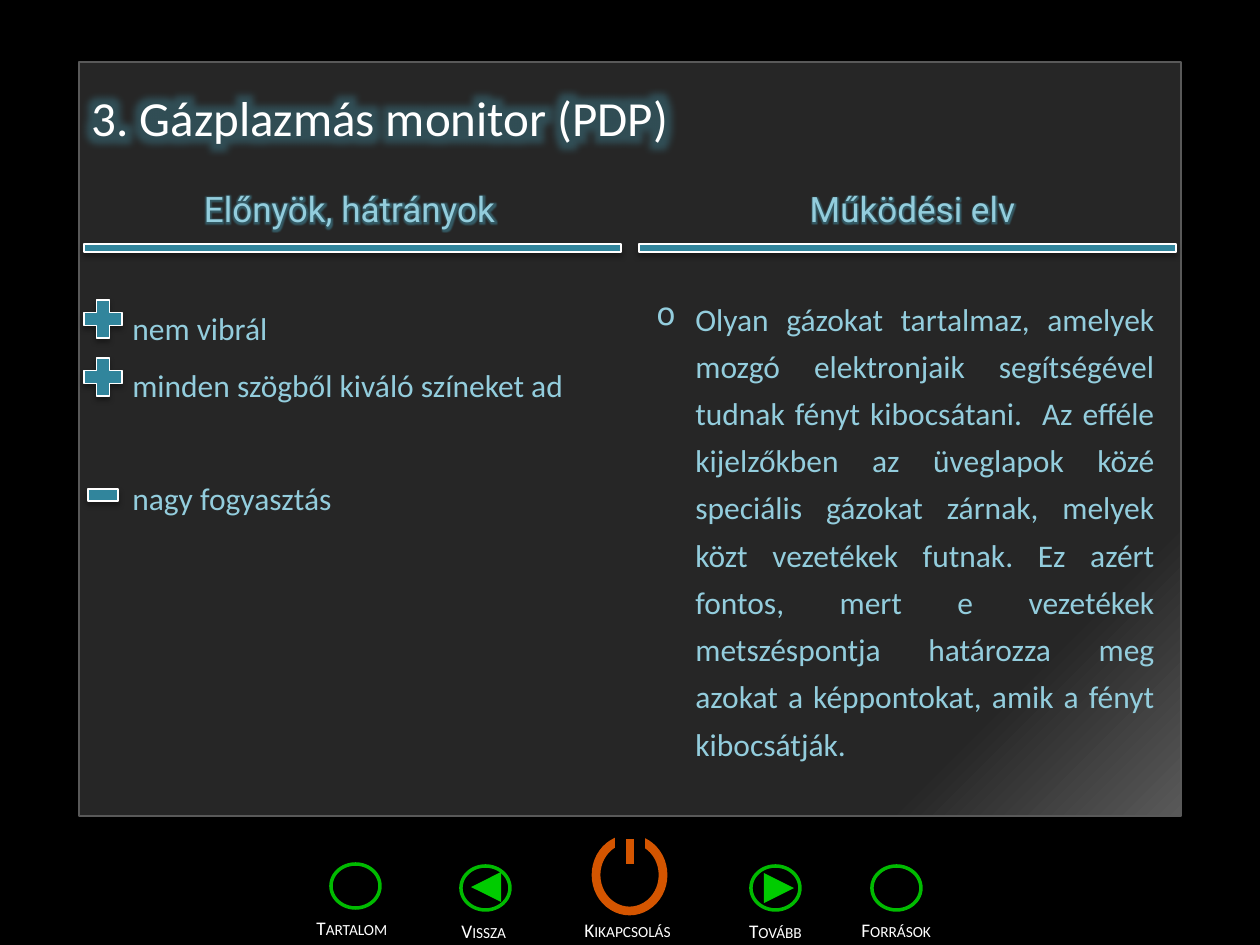
from dataclasses import dataclass

from lxml.etree import SubElement
from pptx import Presentation
from pptx.dml.color import RGBColor
from pptx.enum.shapes import MSO_CONNECTOR as Link, MSO_SHAPE as Kind
from pptx.enum.text import MSO_ANCHOR as Anchor, PP_ALIGN as Align
from pptx.oxml.ns import qn
from pptx.util import Emu, Pt

SCALE = 914400 / 126
WHITE, BLACK, TEAL, SKY = "FFFFFF", "000000", "31859C", "93CDDD"
GREEN, LIME, ORANGE = "00BB00", "00CC00", "D45500"
BODY = (
    "Olyan gázokat tartalmaz, amelyek mozgó elektronjaik segítségével "
    "tudnak fényt kibocsátani.  Az efféle kijelzőkben az üveglapok közé "
    "speciális gázokat zárnak, melyek közt vezetékek futnak. Ez azért "
    "fontos, mert e vezetékek metszéspontja határozza meg azokat a "
    "képpontokat, amik a fényt kibocsátják."
)


@dataclass(frozen=True)
class Box:
    x: int
    y: int
    w: int
    h: int

    def emu(self) -> list[Emu]:
        return [px(n) for n in (self.x, self.y, self.w, self.h)]


@dataclass(frozen=True)
class Button:
    ring: Box
    text: str
    label: Box
    turn: int = 0
    arrow: Box | None = None


@dataclass(frozen=True)
class Head:
    text: str
    box: Box
    bar: Box


BUTTONS = [
    Button(Box(331, 864, 49, 44), "Tartalom", Box(304, 910, 105, 37)),
    Button(Box(461, 866, 49, 44), "Vissza", Box(449, 913, 74, 37),
           270, Box(471, 872, 30, 30)),
    Button(Box(751, 866, 49, 44), "Tovább", Box(732, 913, 87, 37),
           90, Box(764, 873, 30, 30)),
    Button(Box(872, 866, 49, 44), "Források", Box(849, 912, 96, 37)),
]
HEADS = [
    Head("Előnyök, hátrányok", Box(81, 155, 537, 113), Box(84, 244, 537, 8)),
    Head("Működési elv", Box(644, 155, 537, 113), Box(639, 244, 537, 8)),
]
PLUSES = [Box(84, 300, 38, 38), Box(84, 358, 38, 38)]
MINUS = Box(88, 489, 30, 12)


def px(n: int) -> Emu:
    return Emu(round(n * SCALE))


def rgb(code: str) -> RGBColor:
    return RGBColor.from_string(code)


def shape(slide, kind: Kind, box: Box, fill: str = "", line: str = "",
          width: float = 1):
    item = slide.shapes.add_shape(kind, *box.emu())
    item.shadow.inherit = False
    if fill:
        item.fill.solid()
        item.fill.fore_color.rgb = rgb(fill)
    else:
        item.fill.background()
    if line:
        item.line.color.rgb = rgb(line)
        item.line.width = Pt(width)
    else:
        item.line.fill.background()
    return item


def mark(slide, kind: Kind, box: Box):
    item = shape(slide, kind, box, TEAL, WHITE, 0.75)
    effect = item._element.spPr.find(qn("a:effectLst"))
    shade = SubElement(effect, qn("a:outerShdw"), blurRad=str(Pt(3.1)),
                       dist=str(Pt(1.8)), dir="5400000", rotWithShape="0")
    tint(shade, BLACK, 35)
    return item


def tint(node, code: str, alpha: int) -> None:
    color = SubElement(node, qn("a:srgbClr"), val=code)
    SubElement(color, qn("a:alpha"), val=str(alpha * 1000))


def style(frame, size: int, code: str, face: str = "Calibri") -> None:
    for para in frame.paragraphs:
        for run in para.runs:
            run.font.size = Pt(size)
            run.font.name = face
            run.font.color.rgb = rgb(code)


def glow(frame, size: int, alpha: int) -> None:
    props = frame.paragraphs[0].runs[0].font._element
    effect = SubElement(props, qn("a:effectLst"))
    props.find(qn("a:latin")).addprevious(effect)
    tint(SubElement(effect, qn("a:glow"), rad=str(Pt(size))), "4BACC6", alpha)


def text(slide, box: Box, words: str, size: int, code: str,
         face: str = "Calibri"):
    frame = slide.shapes.add_textbox(*box.emu()).text_frame
    frame.word_wrap = True
    frame.text = words
    style(frame, size, code, face)
    return frame


def label(slide, box: Box, words: str, align: Align = Align.LEFT) -> None:
    para = text(slide, box, words, 11, WHITE).paragraphs[0]
    para.alignment = align
    para.runs[0].font._element.set("cap", "small")


def panel(slide) -> None:
    item = shape(slide, Kind.RECTANGLE, Box(79, 62, 1102, 754),
                 line="595959", width=1.5)
    item.fill.gradient()
    item.fill.gradient_angle = 315
    for stop, place, code in zip(item.fill.gradient_stops, (0.84, 1),
                                 ("262626", "595959")):
        stop.position = place
        stop.color.rgb = rgb(code)


def power(slide) -> None:
    shape(slide, Kind.OVAL, Box(596, 839, 67, 72), line=ORANGE, width=5)
    shape(slide, Kind.RECTANGLE, Box(615, 828, 30, 22), BLACK)
    stem = slide.shapes.add_connector(Link.STRAIGHT, px(630), px(839),
                                      px(630), px(864))
    stem.line.color.rgb = rgb(ORANGE)
    stem.line.width = Pt(5)
    SubElement(stem._element.spPr, qn("a:effectLst"))
    label(slide, Box(572, 912, 123, 37), "Kikapcsolás")


def button(slide, item: Button) -> None:
    shape(slide, Kind.OVAL, item.ring, line=GREEN, width=2)
    if item.arrow:
        arrow = shape(slide, Kind.FLOWCHART_EXTRACT, item.arrow, LIME)
        arrow.rotation = item.turn
    align = Align.CENTER if item.text == "Tovább" else Align.LEFT
    label(slide, item.label, item.text, align)


def head(slide, item: Head) -> None:
    mark(slide, Kind.RECTANGLE, item.bar)
    frame = text(slide, item.box, item.text, 20, SKY, "Roboto")
    frame.vertical_anchor = Anchor.MIDDLE
    frame.paragraphs[0].alignment = Align.CENTER
    frame.paragraphs[0].line_spacing = 0.9
    glow(frame, 5, 40)


def title(slide) -> None:
    item = slide.shapes.title
    item.left, item.top, item.width, item.height = Box(79, 38, 1102, 157).emu()
    frame = item.text_frame
    frame.text = "3. Gázplazmás monitor (PDP)"
    frame.vertical_anchor = Anchor.MIDDLE
    frame.paragraphs[0].alignment = Align.LEFT
    style(frame, 28, WHITE)
    glow(frame, 18, 30)
    slide.shapes._spTree.append(item._element)


def points(slide) -> None:
    words = "nem vibrál\nminden szögből kiváló színeket ad\nnagy fogyasztás"
    frame = text(slide, Box(120, 284, 532, 242), words, 18, SKY)
    for para in frame.paragraphs:
        para.line_spacing = 1.5
    frame.paragraphs[-1].space_before = Pt(32.5)
    for box in PLUSES:
        mark(slide, Kind.CROSS, box).adjustments[0] = 0.33
    mark(slide, Kind.RECTANGLE, MINUS)


def theory(slide) -> None:
    para = text(slide, Box(644, 284, 523, 490), BODY, 18, SKY).paragraphs[0]
    para.alignment = Align.JUSTIFY
    para.line_spacing = 1.25
    props = para._p.get_or_add_pPr()
    props.set("marL", str(px(39)))
    props.set("indent", str(px(-39)))
    SubElement(props, qn("a:buChar"), char="o")


def main() -> None:
    deck = Presentation()
    deck.slide_width, deck.slide_height = px(1260), px(945)
    slide = deck.slides.add_slide(deck.slide_layouts[5])
    slide.background.fill.solid()
    slide.background.fill.fore_color.rgb = rgb(BLACK)
    panel(slide)
    power(slide)
    for item in BUTTONS:
        button(slide, item)
    title(slide)
    for item in HEADS:
        head(slide, item)
    points(slide)
    theory(slide)
    deck.save("out.pptx")


if __name__ == "__main__":
    main()
